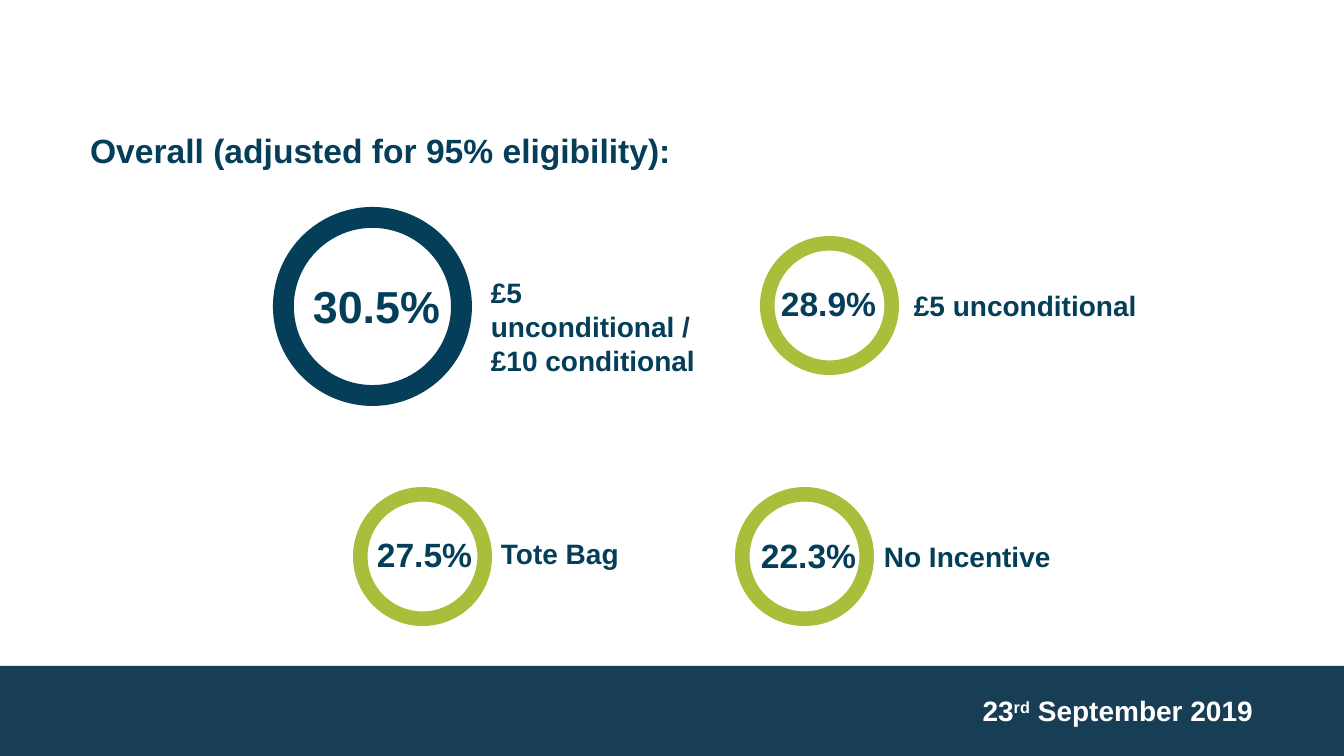
from pptx import Presentation
from pptx.dml.color import RGBColor
from pptx.enum.shapes import MSO_SHAPE
from pptx.enum.text import MSO_ANCHOR, MSO_AUTO_SIZE, PP_ALIGN
from pptx.util import Emu, Pt

PX = 914400 / 100.8
NAVY = RGBColor(0x05, 0x3E, 0x59)
FOOTER_BLUE = RGBColor(0x18, 0x3E, 0x56)
GREEN = RGBColor(0xA9, 0xBE, 0x3B)
WHITE = RGBColor(0xFF, 0xFF, 0xFF)


def px(*lengths):
    return [Emu(round(length * PX)) for length in lengths]


def add_span(para, text, size=20, color=NAVY, raised=0):
    """Add a bold run; raised is the superscript offset in percent."""
    span = para.add_run()
    span.text = text
    font = span.font
    font.name, font.size, font.bold = "Arial", Pt(size), True
    font.color.rgb = color
    if raised:
        span._r.get_or_add_rPr().set("baseline", str(raised * 1000))


class ResponseSlide:
    def __init__(self, deck):
        self.page = deck.slides.add_slide(deck.slide_layouts[5])

    def shape(self, kind, bounds, color):
        shape = self.page.shapes.add_shape(kind, *px(*bounds))
        shape.shadow.inherit = False
        shape.fill.solid()
        shape.fill.fore_color.rgb = color
        shape.line.fill.background()
        return shape

    def ring(self, left, top, size, color):
        ring = self.shape(MSO_SHAPE.DONUT, (left, top, size, size), color)
        ring.adjustments[0] = 0.105

    def title(self, text, bounds):
        title = self.page.shapes.title
        title.left, title.top, title.width, title.height = px(*bounds)
        frame = title.text_frame
        frame.word_wrap = True
        frame.auto_size = MSO_AUTO_SIZE.NONE
        frame.vertical_anchor = MSO_ANCHOR.TOP
        para = frame.paragraphs[0]
        para.alignment = PP_ALIGN.LEFT
        add_span(para, text, size=24)

    def text(self, bounds, spans, align=PP_ALIGN.LEFT, right_inset=10):
        """Add a text box; spans is a list of (text, format) pairs."""
        frame = self.page.shapes.add_textbox(*px(*bounds)).text_frame
        frame.word_wrap = True
        frame.margin_right = px(right_inset)[0]
        para = frame.paragraphs[0]
        para.alignment = align
        for text, style in spans:
            add_span(para, text, **style)


def main():
    deck = Presentation()
    deck.slide_width, deck.slide_height = px(1344, 756)
    slide = ResponseSlide(deck)

    slide.shape(MSO_SHAPE.RECTANGLE, (0, 666, 1344, 90), FOOTER_BLUE)
    slide.title("Overall (adjusted for 95% eligibility):", (80, 125, 813, 50))

    # ring (left, top, size, colour), rate (text, left, top, size), label bounds
    groups = [
        ((353, 487, 139, GREEN), ("27.5%", 367, 529, 24),
         "Tote Bag", (491, 532, 190, 44)),
        ((273, 207, 199, NAVY), ("30.5%", 303, 274, 32),
         "£5 unconditional / £10 conditional", (481, 271, 252, 78)),
        ((760, 236, 139, GREEN), ("28.9%", 771, 278, 24),
         "£5 unconditional", (904, 284, 250, 44)),
        ((735, 487, 139, GREEN), ("22.3%", 751, 530, 24),
         "No Incentive", (874, 535, 190, 44)),
    ]
    for ring, (rate, left, top, size), label, label_bounds in groups:
        slide.ring(*ring)
        slide.text((left, top, 157, 2 * size), [(rate, {"size": size})])
        slide.text(label_bounds, [(label, {})])

    white = {"color": WHITE}
    date = [("23", white), ("rd", {"color": WHITE, "raised": 30}),
            (" September 2019", white)]
    slide.text((830, 689, 423, 40), date, align=PP_ALIGN.RIGHT, right_inset=0)

    deck.save("out.pptx")


if __name__ == "__main__":
    main()
